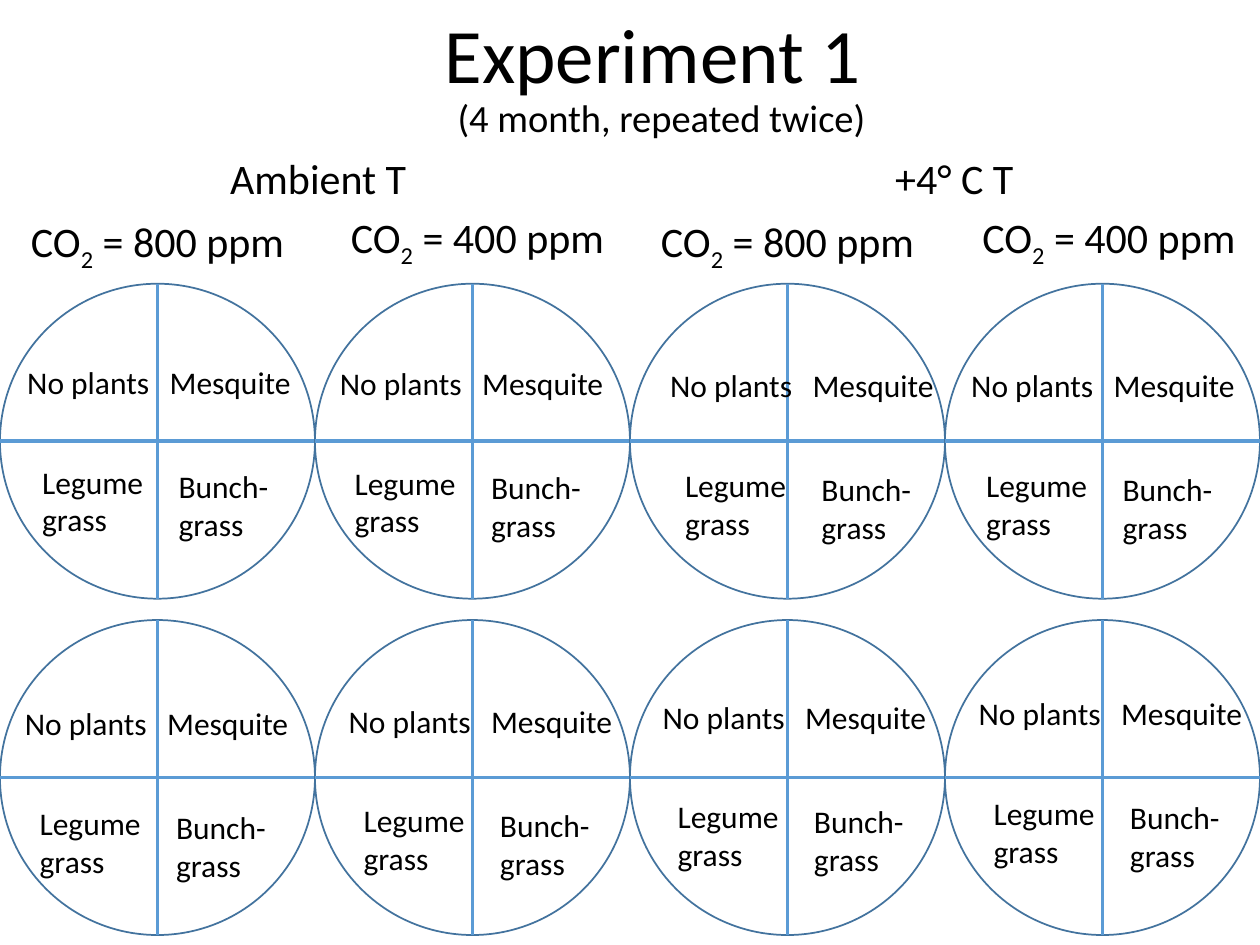
from dataclasses import dataclass
from itertools import product

from lxml.etree import SubElement
from pptx import Presentation
from pptx.dml.color import RGBColor
from pptx.enum.shapes import MSO_CONNECTOR, MSO_SHAPE
from pptx.enum.text import MSO_ANCHOR, MSO_AUTO_SIZE, PP_ALIGN
from pptx.oxml.ns import qn
from pptx.slide import Slide
from pptx.util import Cm, Pt

COLORS = {"text": "000000", "outline": "43739E", "divider": "5B9BD5"}
DIAMETER = 6.35
DISH_TOPS = (5.72, 12.5)

# Label: text, offset in its set, size, wrapping
LABELS = (
    ("No plants", 0, 0, 3, 1.02, False),
    ("Bunch-grass", 3.05, 2.1, 2.67, 1.8, True),
    ("Mesquite", 2.87, 0, 2.97, 1.02, False),
    ("Legume grass", 0.3, 2.01, 2.97, 1.8, True),
)
# Top-left corner of each dish's label set
LABEL_SETS = (
    (0.3, 7.19), (6.6, 7.21), (13.26, 7.26), (19.33, 7.26),
    (0.25, 14.07), (6.78, 14.02), (13.11, 13.94), (19.48, 13.87),
)
TEMPERATURES = (("Ambient T", 4.37, 4.09), ("+4° C T", 17.78, 2.92))
CO2_LEVELS = ((800, 0.33, 4.22), (400, 6.78, 4.14),
              (800, 13.03, 4.22), (400, 19.51, 4.14))


@dataclass
class SlideBuilder:
    page: Slide
    font: str = "Calibri"

    def color(self, name):
        return RGBColor.from_string(COLORS[name])

    def style(self, para, size, align=PP_ALIGN.LEFT):
        para.alignment = align
        para.font.name = self.font
        para.font.size = Pt(size)
        para.font.color.rgb = self.color("text")

    def title(self, heading, subtitle):
        box = self.page.shapes.title
        box.left, box.top, box.width, box.height = Cm(1.27), 0, Cm(24.13), Cm(3.18)
        box.text_frame.vertical_anchor = MSO_ANCHOR.MIDDLE
        box.text_frame.auto_size = MSO_AUTO_SIZE.NONE
        para = box.text_frame.paragraphs[0]
        self.style(para, 44, PP_ALIGN.CENTER)
        para.line_spacing = 0.9
        para.add_run().text = heading
        para.add_line_break()
        span = para.add_run()
        span.text = subtitle
        span.font.size = Pt(22)

    def text(self, shapes, parts, left, top, width, height, size,
             wrap=False, align=PP_ALIGN.LEFT):
        """Add a text box; every second part is a subscript."""
        box = shapes.add_textbox(Cm(left), Cm(top), Cm(width), Cm(height))
        box.text_frame.word_wrap = wrap
        box.text_frame.auto_size = MSO_AUTO_SIZE.SHAPE_TO_FIT_TEXT
        para = box.text_frame.paragraphs[0]
        self.style(para, size, align)
        for index, part in enumerate(parts):
            span = para.add_run()
            span.text = part
            if index % 2:
                span._r.get_or_add_rPr().set("baseline", "-25000")

    def header(self, parts, left, top, width):
        self.text(self.page.shapes, parts, left, top, width, 1.27, 24,
                  align=PP_ALIGN.CENTER)

    def divider(self, shapes, *ends):
        line = shapes.add_connector(MSO_CONNECTOR.STRAIGHT, *map(Cm, ends))
        line.line.color.rgb = self.color("divider")
        line.line.width = Pt(2)
        SubElement(line._element.spPr, qn("a:effectLst"))

    def dish(self, left, top):
        shapes = self.page.shapes.add_group_shape().shapes
        circle = shapes.add_shape(MSO_SHAPE.OVAL, Cm(left), Cm(top),
                                  Cm(DIAMETER), Cm(DIAMETER))
        circle.shadow.inherit = False
        circle.fill.background()
        circle.line.color.rgb = self.color("outline")
        circle.line.width = Pt(1)
        middle_x, middle_y = left + DIAMETER / 2, top + DIAMETER / 2
        self.divider(shapes, middle_x, top, middle_x, top + DIAMETER)
        self.divider(shapes, left + DIAMETER, middle_y, left, middle_y)

    def label_set(self, left, top):
        shapes = self.page.shapes.add_group_shape().shapes
        for label, dx, dy, width, height, wrap in LABELS:
            self.text(shapes, [label], left + dx, top + dy, width, height, 18, wrap)


def main():
    deck = Presentation()
    deck.slide_width, deck.slide_height = Cm(25.4), Cm(19.05)
    builder = SlideBuilder(deck.slides.add_slide(deck.slide_layouts[5]))

    # Title and column headers
    builder.title("Experiment 1 ", "(4 month, repeated twice)")
    for temperature, left, width in TEMPERATURES:
        builder.header([temperature], left, 2.95, width)
    for level, left, top in CO2_LEVELS:
        builder.header(["CO", "2", f" = {level} ppm"], left, top, 5.69)

    # Two rows of four divided dishes
    for top, column in product(DISH_TOPS, range(4)):
        builder.dish(column * DIAMETER, top)

    # Plant labels
    for left, top in LABEL_SETS:
        builder.label_set(left, top)

    deck.save("out.pptx")


if __name__ == "__main__":
    main()
